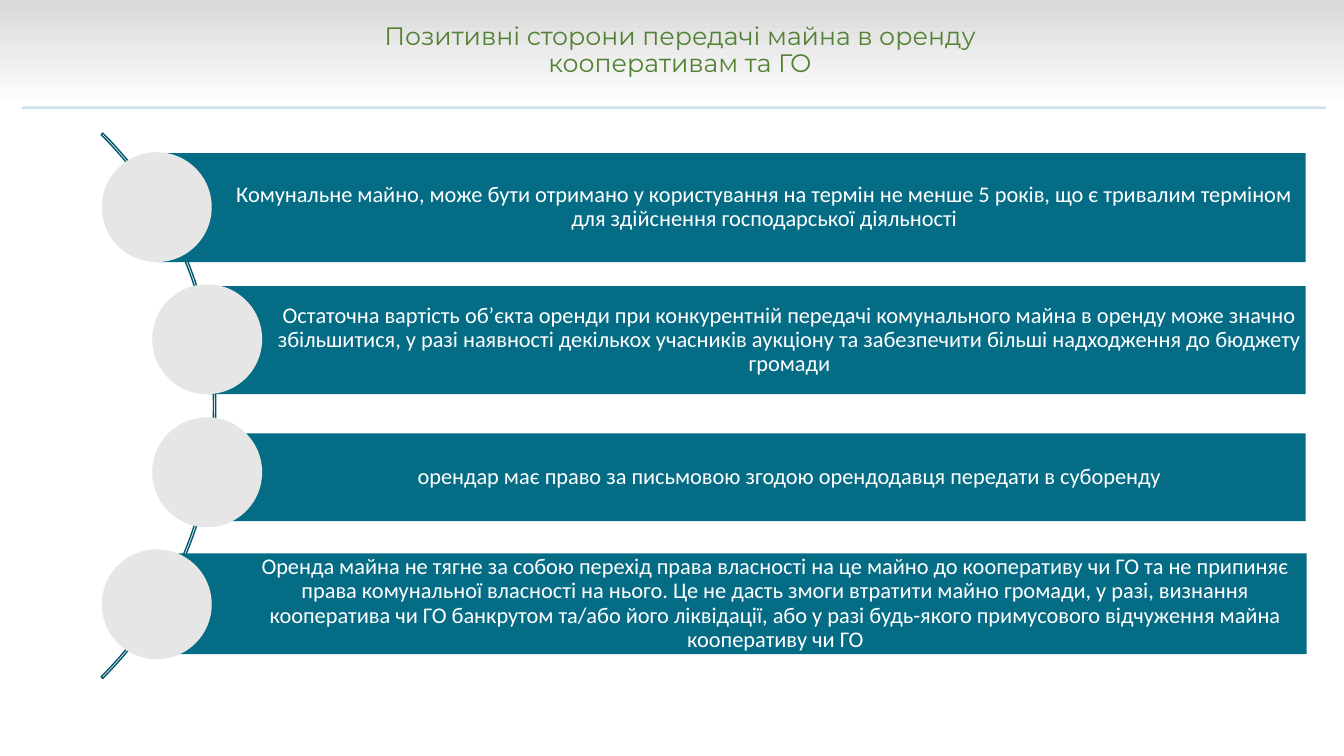
from typing import NamedTuple

from lxml import etree
from pptx import Presentation
from pptx.dml.color import RGBColor
from pptx.enum import shapes, text
from pptx.oxml import ns
from pptx.util import Inches, Pt

TEAL = RGBColor(0x05, 0x6C, 0x86)
DARK_TEAL = RGBColor(0x04, 0x56, 0x6B)
RULE_TEAL = RGBColor(0x05, 0x77, 0x92)
GREEN = RGBColor(0x54, 0x82, 0x35)
GREY = RGBColor(0xD9, 0xD9, 0xD9)
LIGHT_GREY = RGBColor(0xE7, 0xE6, 0xE6)
WHITE = RGBColor(0xFF, 0xFF, 0xFF)

CIRCLE_SIZE = 1.09
CIRCLE_TOP = 1.51
CIRCLE_STEP = 1.313


class Benefit(NamedTuple):
    circle_left: float
    left: float
    top: float
    width: float
    height: float
    wording: str


BENEFITS = [
    Benefit(1.01, 1.56, 1.52, 11.39, 1.08,
            "Комунальне майно, може бути отримано у користування на термін не менше 5 років, "
            "що є тривалим терміном для здійснення господарської діяльності"),
    Benefit(1.51, 2.06, 2.84, 10.89, 1.07,
            "Остаточна вартість об’єкта оренди при конкурентній передачі комунального майна "
            "в оренду може значно збільшитися, у разі наявності декількох учасників аукціону "
            "та забезпечити більші надходження до бюджету громади"),
    Benefit(1.51, 2.06, 4.3, 10.89, 0.87,
            "орендар має право за письмовою згодою орендодавця передати в суборенду"),
    Benefit(1.01, 1.77, 5.49, 11.19, 1,
            "Оренда майна не тягне за собою перехід права власності на це майно до кооперативу "
            "чи ГО та не припиняє права комунальної власності на нього. Це не дасть змоги "
            "втратити майно громади, у разі, визнання кооператива чи ГО банкрутом та/або його "
            "ліквідації, або у разі будь-якого примусового відчуження майна кооперативу чи ГО"),
]


def add_plain_shape(s, kind, left: float, top: float, width: float, height: float,
                    fill: RGBColor | None = None):
    """Add a preset shape with no shadow or outline, filled only if a colour is given."""
    sp = s.shapes.add_shape(kind, Inches(left), Inches(top), Inches(width), Inches(height))
    sp.shadow.inherit = False
    sp.line.fill.background()
    if fill is None:
        sp.fill.background()
    else:
        sp.fill.solid()
        sp.fill.fore_color.rgb = fill
    return sp


def write_centred(sp, wording: str, font: str, size: float, color: RGBColor) -> None:
    tf = sp.text_frame
    tf.word_wrap = True
    tf.vertical_anchor = text.MSO_ANCHOR.MIDDLE
    p = tf.paragraphs[0]
    p.text = wording
    p.alignment = text.PP_ALIGN.CENTER
    p.line_spacing = 0.9
    p.font.name = font
    p.font.size = Pt(size)
    p.font.color.rgb = color


def add_header(s) -> None:
    band = add_plain_shape(s, shapes.MSO_SHAPE.RECTANGLE, 0, 0, 13.33, 1.05)
    band.fill.gradient()
    band.fill.gradient_angle = 270
    for stop, color in zip(band.fill.gradient_stops, (GREY, WHITE)):
        stop.color.rgb = color

    rule = s.shapes.add_connector(shapes.MSO_CONNECTOR.STRAIGHT, Inches(0.22), Inches(1.07),
                                  Inches(13.15), Inches(1.07))
    rule.line.width = Pt(2)
    rule.line.color.rgb = RULE_TEAL
    sp_pr = rule._element.spPr
    color = sp_pr.find(".//" + ns.qn("a:srgbClr"))
    etree.SubElement(color, ns.qn("a:alpha"), val="20000")
    etree.SubElement(sp_pr, ns.qn("a:effectLst"))

    title = s.shapes.add_textbox(Inches(2.87), Inches(0.19), Inches(7.75), Inches(0.62))
    write_centred(title, "Позитивні сторони передачі майна в оренду кооперативам та ГО",
                  "Montserrat", 18, GREEN)


def add_arc(s) -> None:
    arc = add_plain_shape(s, shapes.MSO_SHAPE.BLOCK_ARC, -5.51, 0.2, 7.65, 7.65)
    for i, value in enumerate((189, 27, 0.003)):
        arc.adjustments[i] = value
    arc.line.width = Pt(1)
    arc.line.color.rgb = DARK_TEAL


def add_benefit(s, benefit: Benefit, circle_top: float) -> None:
    bar = add_plain_shape(s, shapes.MSO_SHAPE.RECTANGLE, benefit.left, benefit.top,
                          benefit.width, benefit.height, TEAL)
    tf = bar.text_frame
    tf.margin_left = Inches(0.69)
    tf.margin_top = tf.margin_right = tf.margin_bottom = Inches(0.04)
    write_centred(bar, benefit.wording, "Calibri", 16, WHITE)
    add_plain_shape(s, shapes.MSO_SHAPE.OVAL, benefit.circle_left, circle_top,
                    CIRCLE_SIZE, CIRCLE_SIZE, LIGHT_GREY)


def main() -> None:
    prs = Presentation()
    prs.slide_width, prs.slide_height = Inches(13.33), Inches(7.5)
    s = prs.slides.add_slide(prs.slide_layouts[6])
    add_header(s)
    add_arc(s)
    for i, benefit in enumerate(BENEFITS):
        add_benefit(s, benefit, round(CIRCLE_TOP + i * CIRCLE_STEP, 2))
    prs.save("out.pptx")


if __name__ == "__main__":
    main()
